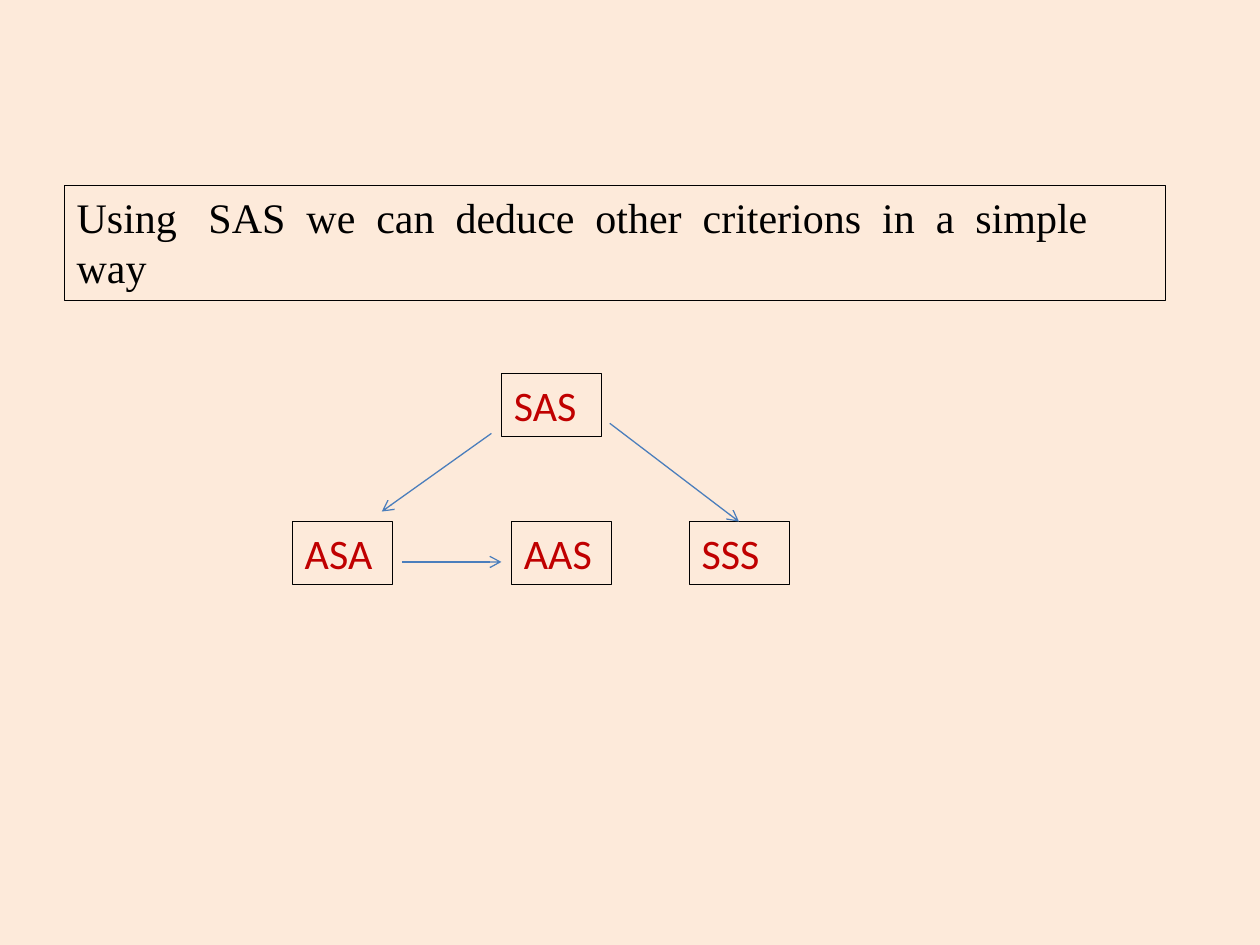
"""Build a slide showing which congruence criteria follow from SAS."""
from lxml import etree
from pptx import Presentation
from pptx.dml import color
from pptx.enum import shapes, text
from pptx.oxml import ns
from pptx.util import Inches, Pt

BACKGROUND, BLACK, RED, BLUE = "FDEADA", "000000", "C00000", "4B7EBC"
STATEMENT = "Using   SAS  we  can  deduce  other  criterions  in  a  simple  way"
STATEMENT_BOX = (0.51, 1.47, 8.74, 0.91)
CRITERION_SIZE = (0.79, 0.5)
TOP_ROW, BOTTOM_ROW = 2.96, 4.14
CRITERIA = [
    ("SAS", 3.98, TOP_ROW),
    ("SSS", 5.47, BOTTOM_ROW),
    ("AAS", 4.06, BOTTOM_ROW),
    ("ASA", 2.32, BOTTOM_ROW),
]
ARROWS = [
    ((3.9, 3.44), (3.03, 4.06), None),
    ((4.84, 3.36), (5.87, 4.14), "SSS"),
    ((3.19, 4.46), (3.98, 4.46), None),
]


def rgb(value):
    """Turn a hex string into a colour."""
    return color.RGBColor.from_string(value)


def add_box(slide, box, wording, font_name, font_color):
    """Add an outlined text box and return it."""
    shape = slide.shapes.add_textbox(*map(Inches, box))
    shape.line.color.rgb = rgb(BLACK)
    shape.line.width = Pt(0.25)
    frame = shape.text_frame
    frame.word_wrap = True
    frame.auto_size = text.MSO_AUTO_SIZE.SHAPE_TO_FIT_TEXT
    run = frame.paragraphs[0].add_run()
    run.text = wording
    run.font.name = font_name
    run.font.size = Pt(24)
    run.font.color.rgb = rgb(font_color)
    return shape


def add_arrow(slide, start, end, target=None):
    """Add an arrow, joined to the top of the target if there is one."""
    arrow = slide.shapes.add_connector(
        shapes.MSO_CONNECTOR.STRAIGHT, *map(Inches, start + end))
    if target is not None:
        arrow.end_connect(target, 0)
    arrow.line.color.rgb = rgb(BLUE)
    arrow.line.width = Pt(0.75)
    properties = arrow.element.spPr
    outline = properties.find(ns.qn("a:ln"))
    etree.SubElement(outline, ns.qn("a:tailEnd"), type="arrow")
    etree.SubElement(properties, ns.qn("a:effectLst"))


def main():
    """Assemble and save the slide."""
    presentation = Presentation()
    presentation.slide_width = Inches(10)
    presentation.slide_height = Inches(7.5)
    slide = presentation.slides.add_slide(presentation.slide_layouts[6])
    slide.background.fill.solid()
    slide.background.fill.fore_color.rgb = rgb(BACKGROUND)

    add_box(slide, STATEMENT_BOX, STATEMENT, "Times New Roman", BLACK)
    boxes = {
        name: add_box(slide, (left, top, *CRITERION_SIZE), name, "Calibri", RED)
        for name, left, top in CRITERIA
    }
    for start, end, target in ARROWS:
        add_arrow(slide, start, end, boxes.get(target))
    presentation.save("out.pptx")


if __name__ == "__main__":
    main()
